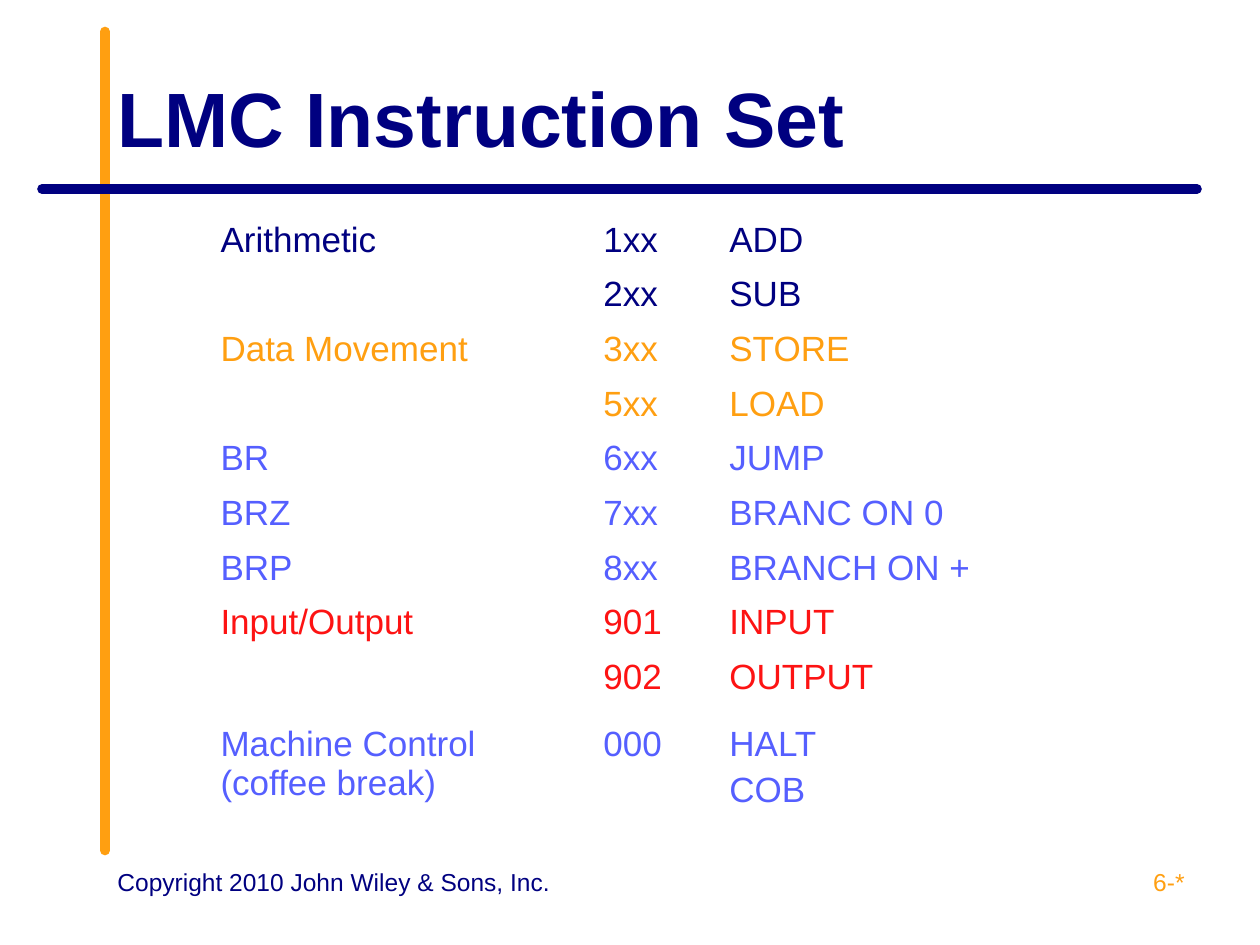
from dataclasses import dataclass

from lxml import etree
from pptx import Presentation
from pptx.dml.color import RGBColor
from pptx.enum.shapes import MSO_CONNECTOR
from pptx.enum.text import MSO_ANCHOR, PP_ALIGN
from pptx.oxml.ns import qn
from pptx.util import Pt

STRAIGHT = MSO_CONNECTOR.STRAIGHT
TOP, MIDDLE = MSO_ANCHOR.TOP, MSO_ANCHOR.MIDDLE
LEFT, RIGHT = PP_ALIGN.LEFT, PP_ALIGN.RIGHT


@dataclass(frozen=True)
class Theme:
    font: str = "Arial"
    navy: RGBColor = RGBColor(0x00, 0x00, 0x80)
    orange: RGBColor = RGBColor(0xFF, 0x9F, 0x11)
    blue: RGBColor = RGBColor(0x55, 0x5F, 0xFF)
    red: RGBColor = RGBColor(0xFD, 0x13, 0x13)
    title_size: Pt = Pt(44)
    table_size: Pt = Pt(20)
    footer_size: Pt = Pt(14)


theme = Theme()


def style_text(text_frame, size, color, bold=False):
    for paragraph in text_frame.paragraphs:
        for run in paragraph.runs:
            run.font.name = theme.font
            run.font.size = size
            run.font.bold = bold
            run.font.color.rgb = color


presentation = Presentation()
presentation.slide_width = Pt(720)
presentation.slide_height = Pt(540)
slide = presentation.slides.add_slide(presentation.slide_layouts[6])

# Crossing rules with round ends
for x1, y1, x2, y2, color in (
    (60, 486, 60, 18, theme.orange),
    (684, 108, 24, 108, theme.navy),
):
    rule = slide.shapes.add_connector(STRAIGHT, Pt(x1), Pt(y1), Pt(x2), Pt(y2))
    rule.line.color.rgb = color
    rule.line.width = Pt(5.5)
    etree.SubElement(rule.line._get_or_add_ln(), qn("a:round"))
    rule.line._get_or_add_ln().set("cap", "rnd")
    etree.SubElement(rule._element.spPr, qn("a:effectLst"))

# Title and footer
for text, left, top, width, height, size, color, bold, anchor, alignment in (
    ("Copyright 2010 John Wiley & Sons, Inc.", 60, 492, 264, 37.5,
     theme.footer_size, theme.navy, False, TOP, LEFT),
    ("6-*", 516, 492, 168, 37.5,
     theme.footer_size, theme.orange, False, TOP, RIGHT),
    ("LMC Instruction Set", 60, 21.6, 624, 90,
     theme.title_size, theme.navy, True, MIDDLE, LEFT),
):
    text_box = slide.shapes.add_textbox(Pt(left), Pt(top), Pt(width), Pt(height))
    text_frame = text_box.text_frame
    text_frame.word_wrap = True
    text_frame.vertical_anchor = anchor
    text_frame.text = text
    text_frame.paragraphs[0].alignment = alignment
    style_text(text_frame, size, color, bold)

# Instruction table; \v is a line break, \n a new paragraph
instructions = (
    ("Arithmetic", "1xx", "ADD", theme.navy),
    ("", "2xx", "SUB", theme.navy),
    ("Data Movement", "3xx", "STORE", theme.orange),
    ("", "5xx", "LOAD", theme.orange),
    ("BR", "6xx", "JUMP", theme.blue),
    ("BRZ", "7xx", "BRANC ON 0", theme.blue),
    ("BRP", "8xx", "BRANCH ON +", theme.blue),
    ("Input/Output", "901", "INPUT", theme.red),
    ("", "902", "OUTPUT", theme.red),
    ("Machine Control\v(coffee break)", "000", "HALT\nCOB", theme.blue),
)
column_widths = (218.8, 72, 152)
row_heights = [31.25] * 8 + [38, 60]

table = slide.shapes.add_table(
    len(instructions), len(column_widths), Pt(126), Pt(126),
    Pt(sum(column_widths)), Pt(sum(row_heights)),
).table
table.first_row = False
table.horz_banding = False
for column, width in zip(table.columns, column_widths):
    column.width = Pt(width)

for row, height, (*texts, color) in zip(table.rows, row_heights, instructions):
    row.height = Pt(height)
    for cell, text in zip(row.cells, texts):
        cell.fill.background()
        cell.margin_left = cell.margin_right = 0
        cell.margin_top = cell.margin_bottom = 0
        cell.vertical_anchor = TOP
        cell.text_frame.text = text
        for paragraph in cell.text_frame.paragraphs[1:]:
            paragraph.space_before = Pt(4)
        style_text(cell.text_frame, theme.table_size, color)
        for side in ("a:lnB", "a:lnT", "a:lnR", "a:lnL"):
            border = etree.Element(qn(side), w="0")
            etree.SubElement(border, qn("a:noFill"))
            cell._tc.get_or_add_tcPr().insert(0, border)

presentation.save("out.pptx")
